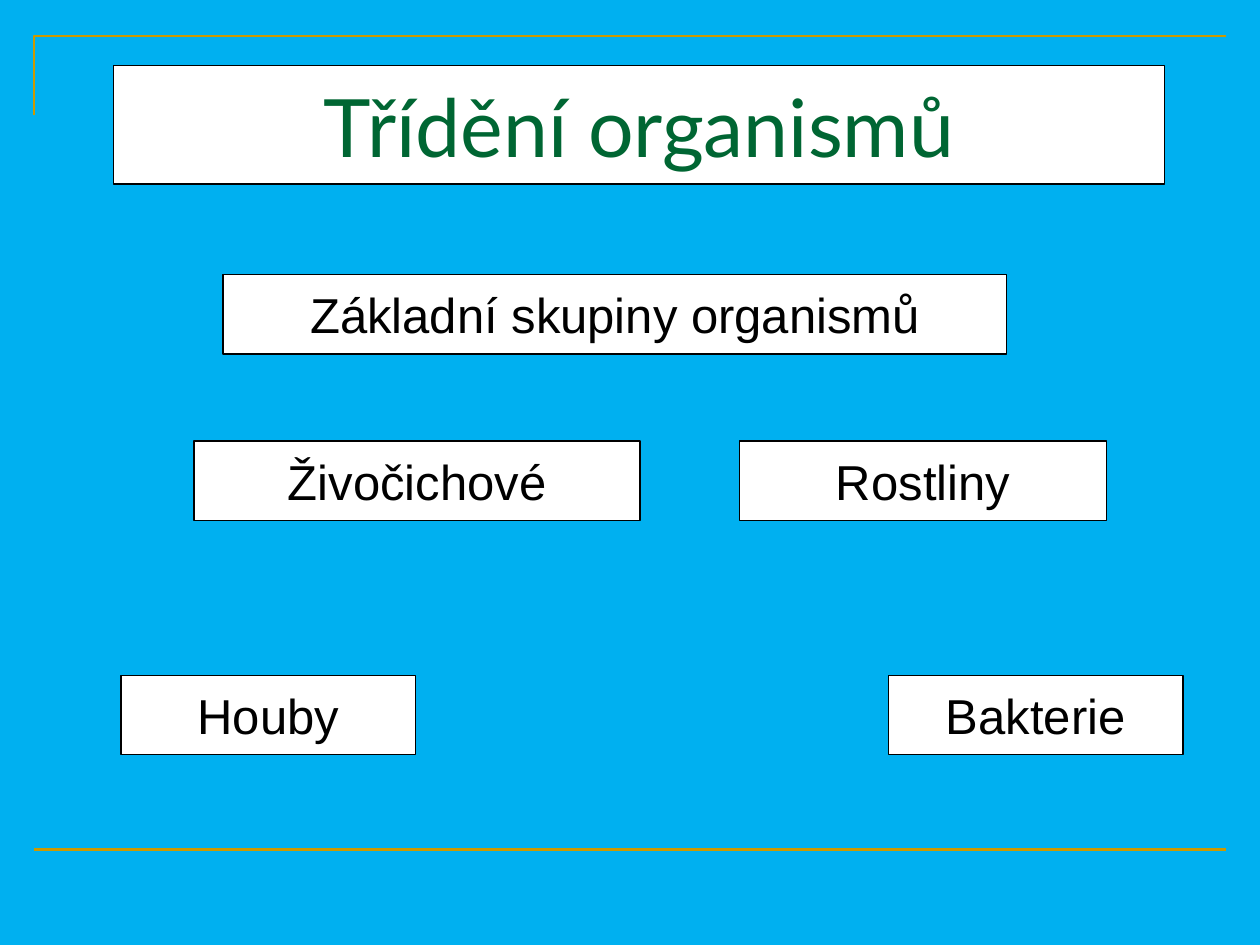
from dataclasses import dataclass

from lxml import etree
from pptx import Presentation
from pptx.dml.color import RGBColor
from pptx.enum.shapes import MSO_CONNECTOR, MSO_SHAPE
from pptx.enum.text import MSO_ANCHOR, MSO_AUTO_SIZE, PP_ALIGN
from pptx.oxml.ns import qn
from pptx.util import Inches, Pt

RECTANGLE = MSO_SHAPE.RECTANGLE
STRAIGHT = MSO_CONNECTOR.STRAIGHT
MIDDLE = MSO_ANCHOR.MIDDLE
NO_AUTOFIT = MSO_AUTO_SIZE.NONE
CENTER = PP_ALIGN.CENTER

COLORS = {
    "background": "00B0F0",
    "frame": "CC9900",
    "box": "FFFFFF",
    "border": "000000",
    "title": "006633",
    "label": "000000",
}
TITLE_FONT = {"name": "Lato", "size": Pt(46), "bold": False}
LABEL_FONT = {"name": "Arial", "size": Pt(28), "bold": False}
TEXT_FRAME = {"word_wrap": True, "auto_size": NO_AUTOFIT, "vertical_anchor": MIDDLE}

WIDTH, HEIGHT = Inches(10), Inches(7.5)

# Shares of the slide, in percent
LEFT_EDGE, RIGHT_EDGE = 2.7, 97.3
FRAME_TOP, CORNER_END, FRAME_BOTTOM = 3.8, 12.2, 89.9
HEADING_ROW, UPPER_ROW, LOWER_ROW = 29.07, 46.67, 71.47
BOX_HEIGHT = 8.4


@dataclass
class Box:
    text: str
    left: float
    top: float
    width: float
    height: float = BOX_HEIGHT


TITLE = Box("Třídění organismů", 9, 6.95, 83.4, 12.53)
GROUPS = [
    Box("Základní skupiny organismů", 17.7, HEADING_ROW, 62.2),
    Box("Rostliny", 58.7, UPPER_ROW, 29.1),
    Box("Živočichové", 15.4, UPPER_ROW, 35.4),
    Box("Houby", 9.6, LOWER_ROW, 23.4),
    Box("Bakterie", 70.5, LOWER_ROW, 23.4),
]


def color(name: str) -> RGBColor:
    return RGBColor.from_string(COLORS[name])


def across(share: float) -> int:
    return round(WIDTH * share / 100)


def down(share: float) -> int:
    return round(HEIGHT * share / 100)


def set_line(shape, name: str, points: float) -> None:
    shape.line.color.rgb = color(name)
    shape.line.width = Pt(points)


def format_box(shape, box: Box, font_values: dict, text_color: str) -> None:
    """Place a title or label box and give it its fill, border and text."""
    shape.left, shape.top = across(box.left), down(box.top)
    shape.width, shape.height = across(box.width), down(box.height)
    shape.fill.solid()
    shape.fill.fore_color.rgb = color("box")
    set_line(shape, "border", 0.75)
    frame = shape.text_frame
    frame.text = box.text
    for name, value in TEXT_FRAME.items():
        setattr(frame, name, value)
    paragraph = frame.paragraphs[0]
    paragraph.alignment = CENTER
    font = paragraph.runs[0].font
    for name, value in font_values.items():
        setattr(font, name, value)
    font.color.rgb = color(text_color)


def add_frame(slide) -> None:
    """Draw the corner line at the top and the rule at the bottom."""
    builder = slide.shapes.build_freeform(across(LEFT_EDGE), down(CORNER_END))
    builder.add_line_segments(
        [(across(LEFT_EDGE), down(FRAME_TOP)), (across(RIGHT_EDGE), down(FRAME_TOP))],
        close=False,
    )
    corner = builder.convert_to_shape()
    corner.fill.background()
    corner.shadow.inherit = False
    set_line(corner, "frame", 1.5)

    rule = slide.shapes.add_connector(
        STRAIGHT, across(LEFT_EDGE), down(FRAME_BOTTOM),
        across(RIGHT_EDGE), down(FRAME_BOTTOM),
    )
    set_line(rule, "frame", 1.5)
    etree.SubElement(rule.element.spPr, qn("a:effectLst"))


def add_group(slide, box: Box) -> None:
    shape = slide.shapes.add_shape(RECTANGLE, 0, 0, 0, 0)
    shape.shadow.inherit = False
    format_box(shape, box, LABEL_FONT, "label")


def main() -> None:
    presentation = Presentation()
    presentation.slide_width, presentation.slide_height = WIDTH, HEIGHT
    title_only = presentation.slide_layouts.get_by_name("Title Only")
    slide = presentation.slides.add_slide(title_only)
    slide.background.fill.solid()
    slide.background.fill.fore_color.rgb = color("background")

    add_frame(slide)
    format_box(slide.shapes.title, TITLE, TITLE_FONT, "title")
    for box in GROUPS:
        add_group(slide, box)
    presentation.save("out.pptx")


if __name__ == "__main__":
    main()
